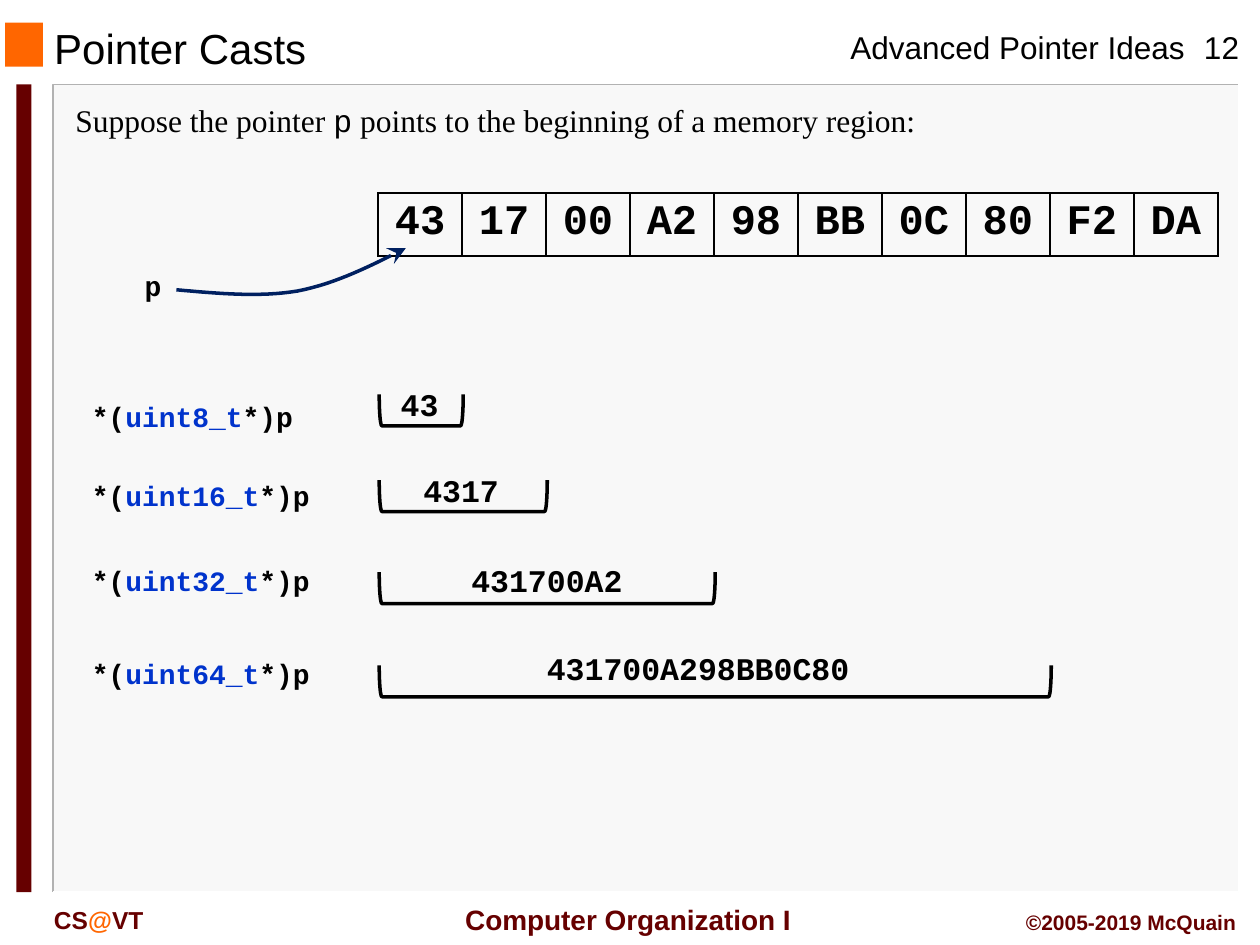
from pptx import Presentation
from pptx.dml.color import RGBColor
from pptx.enum.shapes import MSO_SHAPE
from pptx.enum.text import MSO_ANCHOR, MSO_AUTO_SIZE, PP_ALIGN
from pptx.oxml import parse_xml
from pptx.oxml.ns import nsdecls
from pptx.util import Inches, Pt

RECT, BRACKET = MSO_SHAPE.RECTANGLE, MSO_SHAPE.LEFT_BRACKET
LEFT, CENTER, RIGHT = PP_ALIGN.LEFT, PP_ALIGN.CENTER, PP_ALIGN.RIGHT
TOP, MIDDLE = MSO_ANCHOR.TOP, MSO_ANCHOR.MIDDLE

BLACK = RGBColor(0x00, 0x00, 0x00)
WHITE = RGBColor(0xFF, 0xFF, 0xFF)
PALE = RGBColor(0xF8, 0xF8, 0xF8)
GRAY = RGBColor(0xB2, 0xB2, 0xB2)
ORANGE = RGBColor(0xFF, 0x66, 0x00)
MAROON = RGBColor(0x66, 0x00, 0x00)
NAVY = RGBColor(0x00, 0x20, 0x60)
BLUE = RGBColor(0x00, 0x33, 0xCC)

SANS, SERIF, MONO = "Arial", "Times New Roman", "Courier New"
HEAD = {"name": SANS, "size": Pt(18), "color": BLACK}
FOOT = {"name": SANS, "size": Pt(14), "color": MAROON, "bold": True}
BODY = {"name": SERIF, "size": Pt(18), "color": BLACK}
CODE = {"name": MONO, "size": Pt(16), "color": BLACK, "bold": True}
VALUE = {**CODE, "size": Pt(18)}
BYTE = {**CODE, "size": Pt(24)}

# Memory grid: left edge, top, cell width
GRID_X, GRID_Y, CELL = 3, 1.53, 2 / 3
BYTES = "43 17 00 A2 98 BB 0C 80 F2 DA".split()
# Type, bytes read, label top, bracket top, value box (left, top, width)
CASTS = [
    ("uint8_t", 1, 3.12, 3.13, (3.04, 3.01, 0.58)),
    ("uint16_t", 2, 3.75, 3.81, (3.13, 3.69, 1.06)),
    ("uint32_t", 4, 4.42, 4.54, (3.18, 4.4, 2.32)),
    ("uint64_t", 8, 5.16, 5.28, (4, 5.1, 3.08)),
]


def inches(*vals):
    return [Inches(v) for v in vals]


def write(frame, runs, align=LEFT):
    """Fill the first paragraph with (text, format) runs."""
    para = frame.paragraphs[0]
    para.alignment = align
    for text, form in runs:
        run = para.add_run()
        run.text = text
        for key, val in form.items():
            if key == "color":
                run.font.color.rgb = val
            else:
                setattr(run.font, key, val)


def add_text(slide, box, runs, align=LEFT, wrap=True, anchor=TOP):
    frame = slide.shapes.add_textbox(*inches(*box)).text_frame
    frame.word_wrap = wrap
    frame.vertical_anchor = anchor
    write(frame, runs, align)


def add_block(slide, box, color):
    block = slide.shapes.add_shape(RECT, *inches(*box))
    block.shadow.inherit = False
    block.fill.solid()
    block.fill.fore_color.rgb = color
    block.line.fill.background()


def add_path(slide, points, color, width):
    spots = [inches(*p) for p in points]
    pen = slide.shapes.build_freeform(*spots[0])
    pen.add_line_segments(spots[1:], close=False)
    path = pen.convert_to_shape()
    path.shadow.inherit = False
    path.fill.background()
    path.line.color.rgb = color
    path.line.width = Pt(width)
    return path


def curve(a, b, c, d, steps=16):
    """Points on a cubic curve, without its start."""
    for i in range(1, steps + 1):
        t = i / steps
        u = 1 - t
        yield tuple(u**3 * p + 3 * u * u * t * q + 3 * u * t * t * r + t**3 * s
                    for p, q, r, s in zip(a, b, c, d))


def add_bracket(slide, top, count):
    """Bracket opening upward under count cells."""
    span, deep = count * CELL, 0.25
    left = GRID_X + 0.01 + (span - deep) / 2
    mark = slide.shapes.add_shape(
        BRACKET, *inches(left, top + (deep - span) / 2, deep, span))
    mark.rotation = 270
    mark.shadow.inherit = False
    mark.fill.background()
    mark.line.color.rgb = BLACK
    mark.line.width = Pt(2)


def add_bytes(slide):
    frame = slide.shapes.add_table(
        1, len(BYTES), *inches(GRID_X, GRID_Y, CELL * len(BYTES), 0.41))
    table = frame.table
    table.first_row = table.horz_banding = False
    for col, (cell, text) in enumerate(zip(table.rows[0].cells, BYTES)):
        table.columns[col].width = Inches(CELL)
        write(cell.text_frame, [(text, BYTE)], CENTER)
        props = cell._tc.get_or_add_tcPr()
        for side in ("lnL", "lnR", "lnT", "lnB"):
            props.append(parse_xml(
                f'<a:{side} {nsdecls("a")} w="12700"><a:solidFill>'
                f'<a:srgbClr val="{BLACK}"/></a:solidFill></a:{side}>'))
        cell.fill.background()


def add_frame(slide):
    # Panel with its edges, then the two accent blocks
    left, top, right, low = 0.42, 0.67, 9.83, 7.08
    add_block(slide, (left, top, right - left, low - top), PALE)
    add_path(slide, [(right, top), (left, top), (left, low)], GRAY, 1)
    add_path(slide, [(right, top), (right, low), (left, low)], WHITE, 1)
    add_block(slide, (0.04, 0.18, 0.3, 0.35), ORANGE)
    add_block(slide, (0.13, top, 0.12, low - top), MAROON)

    # Header and footer
    add_text(slide, (6.65, 0.17, 2.88, 0.4),
             [("Advanced Pointer Ideas", HEAD)], wrap=False)
    add_text(slide, (9.36, 0.17, 0.67, 0.4), [("12", HEAD)], CENTER)
    add_text(slide, (0.33, 7.13, 1.5, 0.33),
             [("CS", FOOT), ("@", {**FOOT, "color": ORANGE}), ("VT", FOOT)])
    add_text(slide, (3.53, 7.11, 2.91, 0.37),
             [("Computer Organization I", {**FOOT, "size": Pt(16)})],
             CENTER, False, MIDDLE)
    add_text(slide, (7.83, 7.17, 2.08, 0.3),
             [("©2005-2019 McQuain", {**FOOT, "size": Pt(12)})], RIGHT)


def add_title(slide, text):
    title = slide.shapes.title
    title.left, title.top, title.width, title.height = inches(
        0.33, 0.19, 6.33, 0.38)
    frame = title.text_frame
    frame.auto_size = MSO_AUTO_SIZE.NONE
    frame.vertical_anchor = MIDDLE
    write(frame, [(text, {**HEAD, "size": Pt(24)})])


def add_pointer(slide):
    add_text(slide, (1.05, 2.08, 0.5, 0.37), [("p", CODE)])
    start, mid, end = (1.4, 2.3), (2.36, 2.31), (3.22, 1.97)
    points = [start,
              *curve(start, (1.73, 2.33), (2.06, 2.36), mid),
              *curve(mid, (2.67, 2.25), (2.94, 2.11), end)]
    arrow = add_path(slide, points, NAVY, 2)
    arrow.line._get_or_add_ln().append(
        parse_xml(f'<a:tailEnd {nsdecls("a")} type="stealth" w="lg" len="lg"/>'))


def add_cast(slide, kind, count, top, base, box):
    add_text(slide, (0.63, top, 2.08, 0.37),
             [("*(", CODE), (kind, {**CODE, "color": BLUE}), ("*)p", CODE)])
    add_bracket(slide, base, count)
    add_text(slide, (*box, 0.4), [("".join(BYTES[:count]), VALUE)], CENTER)


def main():
    deck = Presentation()
    deck.slide_width, deck.slide_height = inches(10, 7.5)
    slide = deck.slides.add_slide(deck.slide_layouts[5])
    add_frame(slide)
    add_title(slide, "Pointer Casts")
    add_text(slide, (0.5, 0.75, 7.33, 0.4),
             [("Suppose the pointer ", BODY), ("p", {**BODY, "name": MONO}),
              (" points to the beginning of a memory region:", BODY)])
    add_bytes(slide)
    add_pointer(slide)
    for cast in CASTS:
        add_cast(slide, *cast)
    deck.save("out.pptx")


if __name__ == "__main__":
    main()
